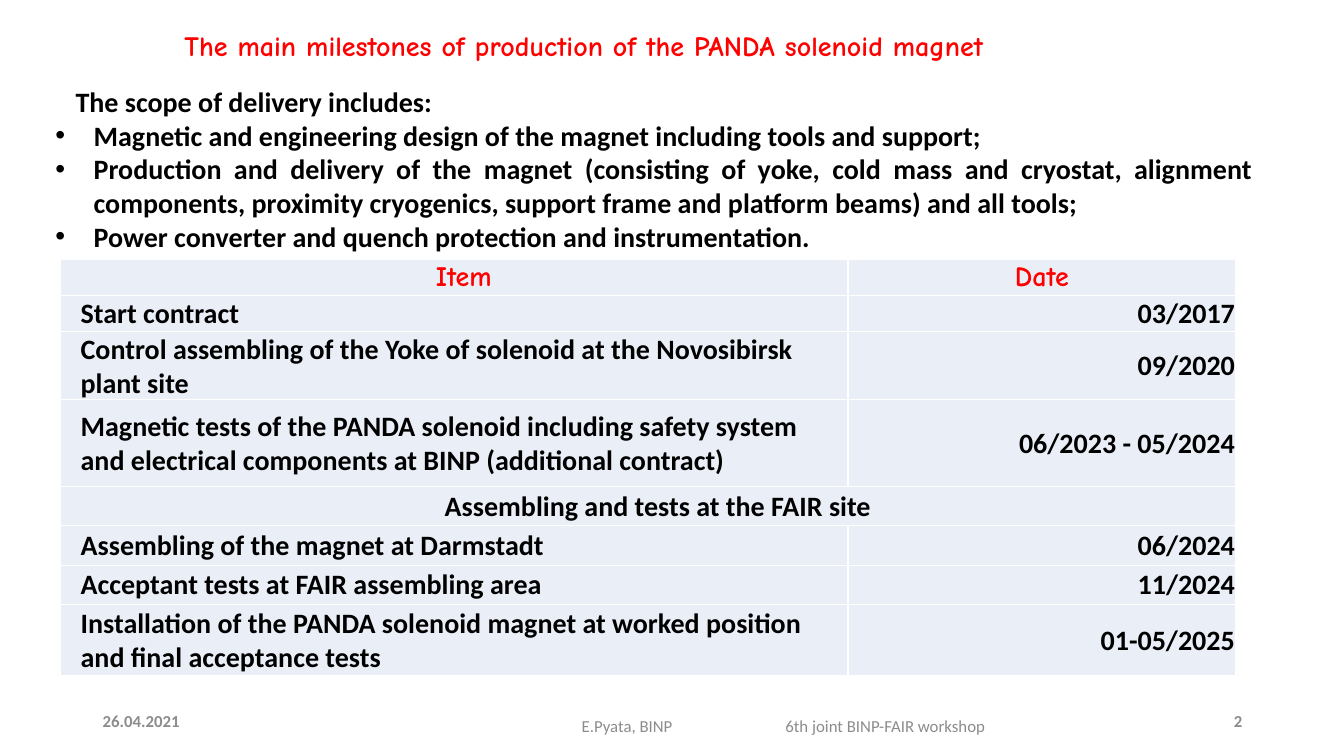
from lxml.etree import SubElement
from pptx import Presentation
from pptx.dml.color import RGBColor
from pptx.enum.text import MSO_ANCHOR, MSO_AUTO_SIZE, PP_ALIGN
from pptx.oxml.ns import qn
from pptx.util import Inches, Pt

WIDTH, HEIGHT = Inches(13.33), Inches(7.5)
BODY, DISPLAY = "Calibri", "Comic Neue"
RED, BLACK, GREY, WHITE, PALE = "FF0000", "000000", "8C8C8C", "FFFFFF", "EAEFF7"
SCOPE = [
    "Magnetic and engineering design of the magnet including tools and support;",
    "Production and delivery of the magnet (consisting of yoke, cold mass and cryostat, "
    "alignment components, proximity cryogenics, support frame and platform beams) and all tools;",
    "Power converter and quench protection and instrumentation.",
]
COLUMNS = [58.59, 28.88]
MILESTONES = [
    (4.8, "Item", "Date"),
    (4.8, "Start contract", "03/2017"),
    (7.6, "Control assembling of the Yoke of solenoid at the Novosibirsk plant site", "09/2020"),
    (11.47, "Magnetic tests of the PANDA solenoid including safety system and electrical "
     "components at BINP (additional contract)", "06/2023 - 05/2024"),
    (5.2, "Assembling and tests at the FAIR site", None),
    (5.2, "Assembling of the magnet at Darmstadt", "06/2024"),
    (5.2, "Acceptant tests at FAIR assembling area", "11/2024"),
    (9.47, "Installation of the PANDA solenoid magnet at worked position and final "
     "acceptance tests", "01-05/2025"),
]


def color(value):
    """Turn a hex string into a colour."""
    return RGBColor.from_string(value)


def across(percent):
    """Give a share of the slide's width."""
    return round(WIDTH * percent / 100)


def down(percent):
    """Give a share of the slide's height."""
    return round(HEIGHT * percent / 100)


def write(para, text, size=20, font=BODY, ink=BLACK, bold=True, align=PP_ALIGN.LEFT):
    """Add one formatted run to a paragraph."""
    para.alignment = align
    span = para.add_run()
    span.text = text
    span.font.size, span.font.name, span.font.bold = Pt(size), font, bold
    span.font.color.rgb = color(ink)


def add_box(page, left, top, width, height, anchor=MSO_ANCHOR.MIDDLE):
    """Add a wrapping text box placed in percent and return its frame."""
    box = page.shapes.add_textbox(across(left), down(top), across(width), down(height))
    frame = box.text_frame
    frame.word_wrap = True
    frame.vertical_anchor = anchor
    return frame


def add_title(page, text):
    """Add the slide's heading."""
    para = add_box(page, 12.98, 1.07, 75.17, 10.4).paragraphs[0]
    para.line_spacing = 0.9
    write(para, text, font=DISPLAY, ink=RED)


def indent(para, margin, hanging=0, bullet=None):
    """Set a paragraph's left margin, hanging indent and bullet."""
    props = para._p.get_or_add_pPr()
    props.set("marL", str(Inches(margin)))
    props.set("indent", str(-Inches(hanging)))
    if bullet:
        SubElement(props, qn("a:buFont"), typeface="Arial")
        SubElement(props, qn("a:buChar"), char=bullet)


def add_scope(page, lead, points):
    """Add the lead line and its bulleted points."""
    frame = add_box(page, 3.38, 10.53, 90.55, 23.73, MSO_ANCHOR.TOP)
    frame.auto_size = MSO_AUTO_SIZE.SHAPE_TO_FIT_TEXT
    write(frame.paragraphs[0], lead, align=PP_ALIGN.JUSTIFY)
    indent(frame.paragraphs[0], 0.2)
    for point in points:
        para = frame.add_paragraph()
        write(para, point, align=PP_ALIGN.JUSTIFY)
        indent(para, 0.38, 0.38, "•")


def add_borders(cell):
    """Draw thin white lines on all sides of a cell."""
    props = cell._tc.get_or_add_tcPr()
    for position, side in enumerate(("a:lnL", "a:lnR", "a:lnT", "a:lnB")):
        line = SubElement(props, qn(side), w=str(Pt(1)))
        SubElement(SubElement(line, qn("a:solidFill")), qn("a:srgbClr"), val=WHITE)
        props.insert(position, line)


def style_cell(cell, inset):
    """Set a cell's fill, borders, margins and anchor."""
    cell.fill.solid()
    cell.fill.fore_color.rgb = color(PALE)
    cell.vertical_anchor = MSO_ANCHOR.MIDDLE
    cell.margin_left = Inches(inset)
    cell.margin_right = cell.margin_top = Inches(0.01)
    cell.margin_bottom = 0
    add_borders(cell)


def add_milestones(page, milestones):
    """Add the table of items and dates."""
    heights = [row[0] for row in milestones]
    table = page.shapes.add_table(
        len(milestones), len(COLUMNS), across(4.5), down(34.27),
        across(sum(COLUMNS)), down(sum(heights))).table
    table.first_row = table.horz_banding = False
    for column, width in zip(table.columns, COLUMNS):
        column.width = across(width)
    for index, (height, item, date) in enumerate(milestones):
        table.rows[index].height = down(height)
        item_cell, date_cell = table.cell(index, 0), table.cell(index, 1)
        style_cell(item_cell, 0.2)
        style_cell(date_cell, 0.01)
        header = index == 0
        look = {"font": DISPLAY, "ink": RED} if header else {}
        centred = header or date is None
        write(item_cell.text_frame.paragraphs[0], item,
              align=PP_ALIGN.CENTER if centred else PP_ALIGN.LEFT, **look)
        if date is None:
            item_cell.merge(date_cell)
        else:
            write(date_cell.text_frame.paragraphs[0], date,
                  align=PP_ALIGN.CENTER if header else PP_ALIGN.RIGHT, **look)


def add_footer(page, date, author, event, number):
    """Add the date, the author with the event, and the slide number."""
    for left, text, align in ((6.9, date, PP_ALIGN.LEFT), (70.67, number, PP_ALIGN.RIGHT)):
        frame = add_box(page, left, 92.67, 22.5, 5.33)
        write(frame.paragraphs[0], text, 12, ink=GREY, align=align)
    frame = add_box(page, 33.68, 93.33, 49.29, 5.33)
    frame.margin_left = Inches(1.28)
    para = frame.paragraphs[0]
    write(para, f"{author}\t", 12, ink=GREY, bold=False)
    write(para, event, 12, ink=GREY, bold=False)
    tabs = SubElement(para._p.get_or_add_pPr(), qn("a:tabLst"))
    SubElement(tabs, qn("a:tab"), pos=str(Inches(2.02)), algn="l")


def main():
    """Build and save the slide."""
    deck = Presentation()
    deck.slide_width, deck.slide_height = WIDTH, HEIGHT
    page = deck.slides.add_slide(deck.slide_layouts[6])
    add_footer(page, "26.04.2021", "E.Pyata, BINP", "6th joint BINP-FAIR workshop", "2")
    add_title(page, "The main milestones of production of the PANDA solenoid magnet")
    add_scope(page, "The scope of delivery includes:", SCOPE)
    add_milestones(page, MILESTONES)
    deck.save("out.pptx")


if __name__ == "__main__":
    main()
